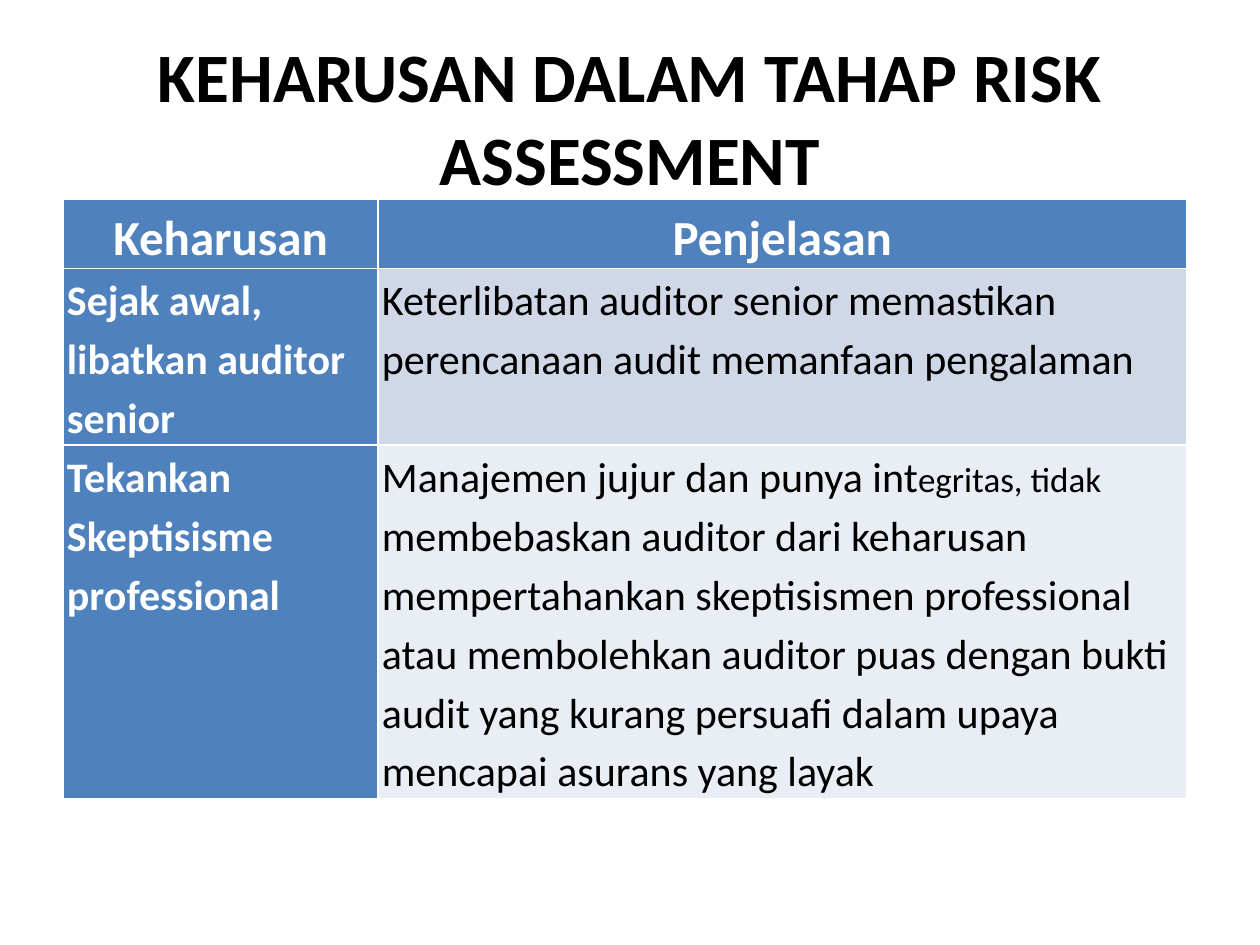
from typing import NamedTuple

from pptx import Presentation
from pptx.dml.color import RGBColor
from pptx.enum.text import MSO_ANCHOR, MSO_AUTO_SIZE, PP_ALIGN
from pptx.util import Cm, Pt

BLUE = RGBColor(0x4F, 0x81, 0xBD)
LIGHT_BLUE = RGBColor(0xD0, 0xD8, 0xE8)
PALE_BLUE = RGBColor(0xE9, 0xED, 0xF4)
WHITE = RGBColor(0xFF, 0xFF, 0xFF)
BLACK = RGBColor(0, 0, 0)
FONT = "Calibri"

COLUMN_WIDTHS = (Cm(6.35), Cm(16.3))


class Span(NamedTuple):
    text: str
    size: float = 24


class Row(NamedTuple):
    duty: Span
    explanation: list[Span]
    height: Cm
    fill: RGBColor


HEADER = Row(Span("Keharusan", 28), [Span("Penjelasan", 28)], Cm(1.35), BLUE)
ROWS = [
    Row(
        Span("Sejak awal, libatkan auditor senior"),
        [Span("Keterlibatan auditor senior memastikan perencanaan audit "
              "memanfaan pengalaman")],
        Cm(3.56), LIGHT_BLUE,
    ),
    Row(
        Span("Tekankan Skeptisisme professional"),
        [
            Span("Manajemen jujur dan punya int"),
            Span("egritas, tidak ", 20),
            Span("membebaskan auditor dari keharusan mempertahankan "
                 "skeptisismen professional atau membolehkan auditor puas "
                 "dengan bukti audit yang kurang persuafi dalam upaya "
                 "mencapai asurans yang layak"),
        ],
        Cm(7.1), PALE_BLUE,
    ),
]


def add_span(para, span: Span, color: RGBColor, bold: bool) -> None:
    run = para.add_run()
    run.text = span.text
    run.font.name = FONT
    run.font.size = Pt(span.size)
    run.font.bold = bold
    run.font.color.rgb = color


def fill_cell(cell, spans: list[Span], fill: RGBColor, centred: bool) -> None:
    """Write the spans; blue cells carry bold white text, others plain black."""
    emphasised = fill == BLUE
    cell.fill.solid()
    cell.fill.fore_color.rgb = fill
    cell.margin_left = cell.margin_right = Cm(0.08)
    cell.margin_top = cell.margin_bottom = 0
    para = cell.text_frame.paragraphs[0]
    para.alignment = PP_ALIGN.CENTER if centred else PP_ALIGN.LEFT
    para.line_spacing = 1.15
    for span in spans:
        add_span(para, span, WHITE if emphasised else BLACK, emphasised)


def add_title(page) -> None:
    title = page.shapes.title
    title.left, title.top = Cm(1.27), Cm(0.76)
    title.width, title.height = Cm(22.86), Cm(3.18)
    frame = title.text_frame
    frame.auto_size = MSO_AUTO_SIZE.NONE
    frame.vertical_anchor = MSO_ANCHOR.MIDDLE
    para = frame.paragraphs[0]
    para.alignment = PP_ALIGN.CENTER
    add_span(para, Span("KEHARUSAN DALAM TAHAP RISK ASSESSMENT", 39.6), BLACK, True)


def add_duty_table(page) -> None:
    rows = [HEADER, *ROWS]
    table = page.shapes.add_table(
        len(rows), len(COLUMN_WIDTHS), Cm(1.27), Cm(4.02),
        sum(COLUMN_WIDTHS), sum(row.height for row in rows),
    ).table
    table.first_col = True
    for column, width in zip(table.columns, COLUMN_WIDTHS):
        column.width = width
    for index, row in enumerate(rows):
        table.rows[index].height = row.height
        centred = row is HEADER
        fill_cell(table.cell(index, 0), [row.duty], BLUE, centred)
        fill_cell(table.cell(index, 1), row.explanation, row.fill, centred)


def main() -> None:
    deck = Presentation()
    deck.slide_width, deck.slide_height = Cm(25.4), Cm(19.05)
    page = deck.slides.add_slide(deck.slide_layouts[5])
    add_title(page)
    add_duty_table(page)
    deck.save("out.pptx")


if __name__ == "__main__":
    main()
